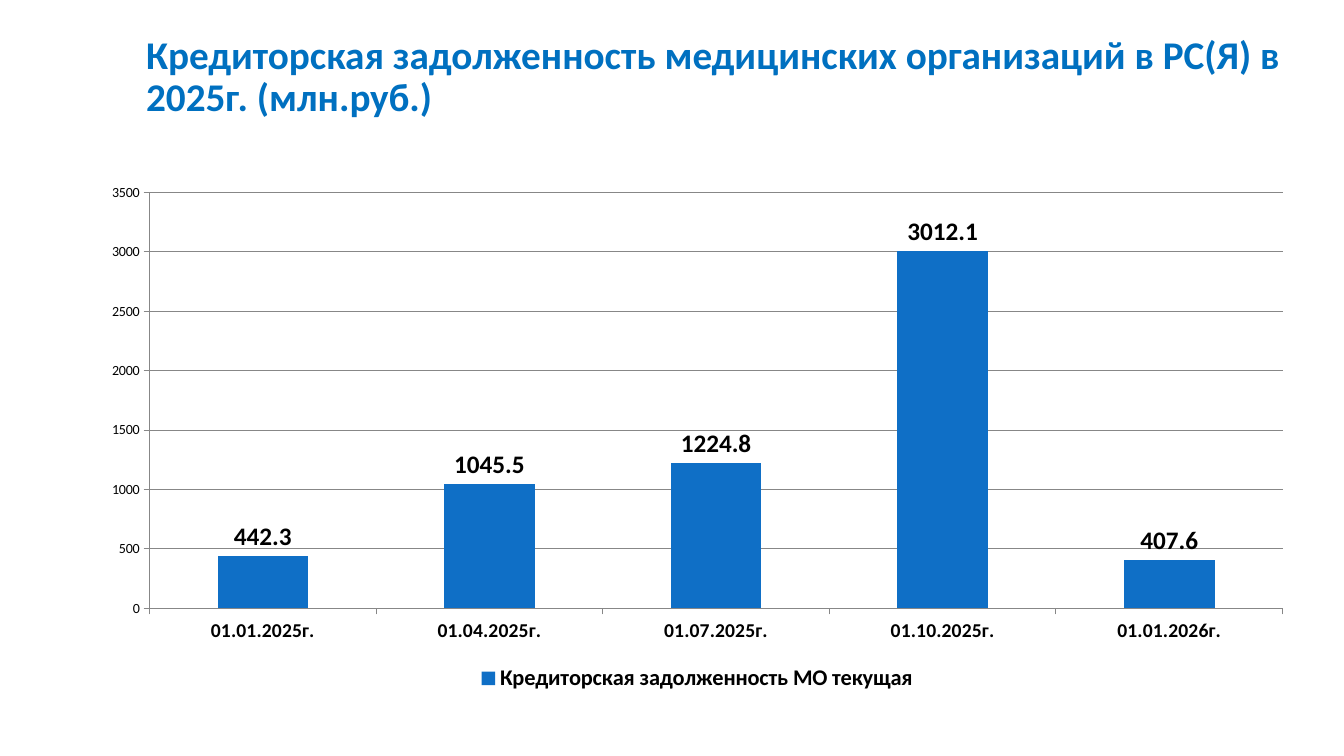
from pptx import Presentation
from pptx import util as u
from pptx.chart import data as chart_data
from pptx.dml import color
from pptx.enum import chart as ch, text

COLORS = {"title": "0070C0", "bar": "0F6FC6", "text": "000000", "line": "878787"}
FONT = "Calibri"

DATES = ["01.01.2025г.", "01.04.2025г.", "01.07.2025г.", "01.10.2025г.", "01.01.2026г."]
DEBTS = [442.3, 1045.5, 1224.8, 3012.1, 407.6]


def rgb(name):
    return color.RGBColor.from_string(COLORS[name])


def assign(target, values):
    for name, value in values.items():
        setattr(target, name, value)


class DebtSlide:
    def __init__(self, deck):
        self.slide = deck.slides.add_slide(deck.slide_layouts[5])

    def style_font(self, font, size, bold=False, tint="text"):
        assign(font, {"name": FONT, "size": u.Pt(size), "bold": bold})
        font.color.rgb = rgb(tint)

    def style_line(self, line):
        line.color.rgb = rgb("line")
        line.width = u.Pt(0.75)

    def title(self, wording, left, top, width, height):
        heading = self.slide.shapes.title
        assign(heading, {"left": u.Pt(left), "top": u.Pt(top),
                         "width": u.Pt(width), "height": u.Pt(height)})
        frame = heading.text_frame
        # The deep bottom margin lifts the two lines
        assign(frame, {"word_wrap": True, "auto_size": text.MSO_AUTO_SIZE.NONE,
                       "vertical_anchor": text.MSO_ANCHOR.MIDDLE,
                       "margin_bottom": u.Pt(34.5)})
        frame.text = wording
        paragraph = frame.paragraphs[0]
        assign(paragraph, {"alignment": text.PP_ALIGN.LEFT, "line_spacing": 0.9})
        self.style_font(paragraph.runs[0].font, 28, True, "title")

    def column_chart(self, series_name, categories, values, left, top, width, height):
        figures = chart_data.CategoryChartData()
        figures.categories = categories
        figures.add_series(series_name, values)
        chart = self.slide.shapes.add_chart(
            ch.XL_CHART_TYPE.COLUMN_CLUSTERED,
            u.Pt(left), u.Pt(top), u.Pt(width), u.Pt(height), figures).chart
        assign(chart, {"has_title": False, "has_legend": True})
        self.style_font(chart.font, 10)

        # Legend
        assign(chart.legend, {"position": ch.XL_LEGEND_POSITION.BOTTOM,
                              "include_in_layout": False})
        self.style_font(chart.legend.font, 16, True)

        # Axes
        for axis, size, bold in ((chart.category_axis, 14, True),
                                 (chart.value_axis, 10, False)):
            assign(axis, {"major_tick_mark": ch.XL_TICK_MARK.OUTSIDE,
                          "minor_tick_mark": ch.XL_TICK_MARK.NONE})
            self.style_font(axis.tick_labels.font, size, bold)
            self.style_line(axis.format.line)
        assign(chart.value_axis, {"minimum_scale": 0, "maximum_scale": 3500,
                                  "major_unit": 500, "has_major_gridlines": True})
        self.style_line(chart.value_axis.major_gridlines.format.line)

        # Columns and their values
        plot = chart.plots[0]
        assign(plot, {"gap_width": 150, "vary_by_categories": False})
        columns = plot.series[0]
        columns.format.fill.solid()
        columns.format.fill.fore_color.rgb = rgb("bar")
        labels = columns.data_labels
        assign(labels, {"show_value": True,
                        "position": ch.XL_LABEL_POSITION.OUTSIDE_END})
        self.style_font(labels.font, 18, True)


def main():
    deck = Presentation()
    assign(deck, {"slide_width": u.Pt(960), "slide_height": u.Pt(540)})
    debt = DebtSlide(deck)
    debt.title("Кредиторская задолженность медицинских организаций в РС(Я) в "
               "2025г. (млн.руб.)", 97.2, 42.5, 862.8, 57)
    debt.column_chart("Кредиторская задолженность МО текущая", DATES, DEBTS,
                      62.6, 124.5, 871, 373)
    deck.save("out.pptx")


if __name__ == "__main__":
    main()
